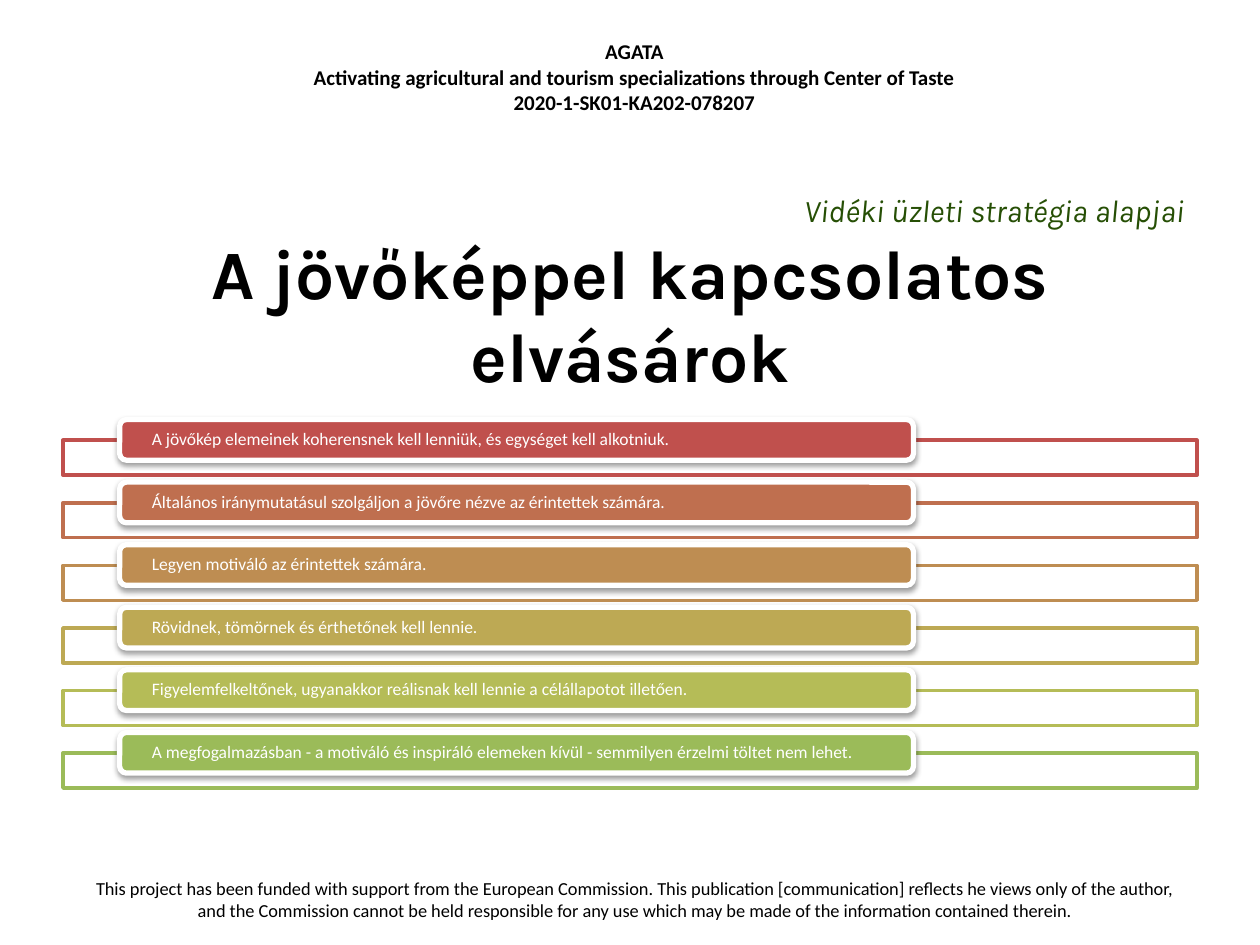
from lxml.etree import SubElement
from pptx import Presentation
from pptx.dml.color import RGBColor
from pptx.enum.shapes import MSO_SHAPE as SHAPE
from pptx.enum.text import MSO_ANCHOR as ANCHOR, MSO_AUTO_SIZE as FIT, PP_ALIGN as ALIGN
from pptx.oxml.ns import qn
from pptx.util import Inches, Pt

W, H = 10, 7.5
MARGIN = 0.05 * W
WIDTH = W - 2 * MARGIN

HEADER = ["AGATA",
          "Activating agricultural and tourism specializations through Center of Taste",
          "2020-1-SK01-KA202-078207"]
FOOTER = ["This project has been funded with support from the European Commission. "
          "This publication [communication] reflects he views only of the author, "
          "and the Commission cannot be held responsible for any use which may be made "
          "of the information contained therein."]
EXPECTATIONS = [
    ("C0504D", "A jövőkép elemeinek koherensnek kell lenniük, és egységet kell alkotniuk."),
    ("BF6F4F", "Általános iránymutatásul szolgáljon a jövőre nézve az érintettek számára."),
    ("BE8D52", "Legyen motiváló az érintettek számára."),
    ("BDA954", "Rövidnek, tömörnek és érthetőnek kell lennie."),
    ("B5BC57", "Figyelemfelkeltőnek, ugyanakkor reálisnak kell lennie a célállapotot illetően."),
    ("9BBB59", "A megfogalmazásban - a motiváló és inspiráló elemeken kívül - "
               "semmilyen érzelmi töltet nem lehet."),
]


def rgb(value):
    return RGBColor.from_string(value)


def emu(box):
    return [Inches(v) for v in box]


def write(tf, lines, align, color="000000", anchor=ANCHOR.TOP, spacing=None, **font):
    frame = {"word_wrap": True, "auto_size": FIT.NONE, "vertical_anchor": anchor}
    for name, value in frame.items():
        setattr(tf, name, value)
    for i, line in enumerate(lines):
        p = tf.add_paragraph() if i else tf.paragraphs[0]
        p.alignment = align
        if spacing:
            p.line_spacing = spacing
        r = p.add_run()
        r.text = line
        r.font.color.rgb = rgb(color)
        for name, value in font.items():
            setattr(r.font, name, value)


def text_box(s, box, lines, align, **style):
    write(s.shapes.add_textbox(*emu(box)).text_frame, lines, align, **style)


def block(s, kind, box, fill, line, width):
    sp = s.shapes.add_shape(kind, *emu(box))
    sp.shadow.inherit = False
    sp.fill.solid()
    sp.fill.fore_color.rgb = rgb(fill)
    sp.line.color.rgb = rgb(line)
    sp.line.width = Pt(width)
    return sp


def set_alpha(color_element, percent):
    SubElement(color_element, qn("a:alpha"), val=str(percent * 1000))


def add_shadow(sp):
    effects = sp._element.spPr.find(qn("a:effectLst"))
    shadow = SubElement(effects, qn("a:outerShdw"), blurRad=str(Pt(3.1)),
                        dist=str(Pt(1.6)), dir="5400000", rotWithShape="0")
    set_alpha(SubElement(shadow, qn("a:srgbClr"), val="000000"), 38)


def headings(s, box):
    """Subtitle line above the slide title."""
    x, y, w, h = box
    sub_h = 0.24 * h
    text_box(s, (x, y, w, sub_h), ["Vidéki üzleti stratégia alapjai"], ALIGN.RIGHT,
             color="264F05", anchor=ANCHOR.MIDDLE, name="Karla", size=Pt(18), italic=True)
    title = s.shapes.title
    title.left, title.top, title.width, title.height = emu((x, y + sub_h, w, h - sub_h))
    write(title.text_frame, ["A jövőképpel kapcsolatos elvásárok"], ALIGN.CENTER,
          anchor=ANCHOR.MIDDLE, name="Karla", size=Pt(39.6), bold=True)


def expectation_list(s, box, items):
    """Equal rows: an outlined strip with a coloured label over its top edge."""
    x, y, w, h = box
    row = h / len(items)
    for i, (color, line) in enumerate(items):
        top = y + i * row
        strip = block(s, SHAPE.RECTANGLE, (x, top + 0.33 * row, w, 0.56 * row),
                      "FFFFFF", color, 2)
        set_alpha(strip._element.spPr.find(qn("a:solidFill"))[0], 90)
        label = block(s, SHAPE.ROUNDED_RECTANGLE, (x + 0.05 * w, top, 0.7 * w, 0.65 * row),
                      color, "FFFFFF", 3)
        add_shadow(label)
        tf = label.text_frame
        insets = {"margin_left": 0.24, "margin_right": 0.24, "margin_top": 0, "margin_bottom": 0}
        for name, value in insets.items():
            setattr(tf, name, Inches(value))
        write(tf, [line], ALIGN.LEFT, color="FFFFFF", anchor=ANCHOR.MIDDLE, spacing=0.9,
              name="Calibri", size=Pt(10))


def main():
    prs = Presentation()
    prs.slide_width, prs.slide_height = Inches(W), Inches(H)
    s = prs.slides.add_slide(prs.slide_layouts[5])

    # Project header and funding note
    text_box(s, (2.08, 0.26, 5.91, 0.71), HEADER, ALIGN.CENTER,
             name="Calibri", size=Pt(12), bold=True)
    text_box(s, (0.54, 6.91, WIDTH, 0.47), FOOTER, ALIGN.CENTER,
             name="Calibri", size=Pt(10.5))

    # Main content
    headings(s, (MARGIN, 1.47, WIDTH, 1.64))
    expectation_list(s, (MARGIN, 3.33, WIDTH, 2.98), EXPECTATIONS)
    prs.save("out.pptx")


if __name__ == "__main__":
    main()
